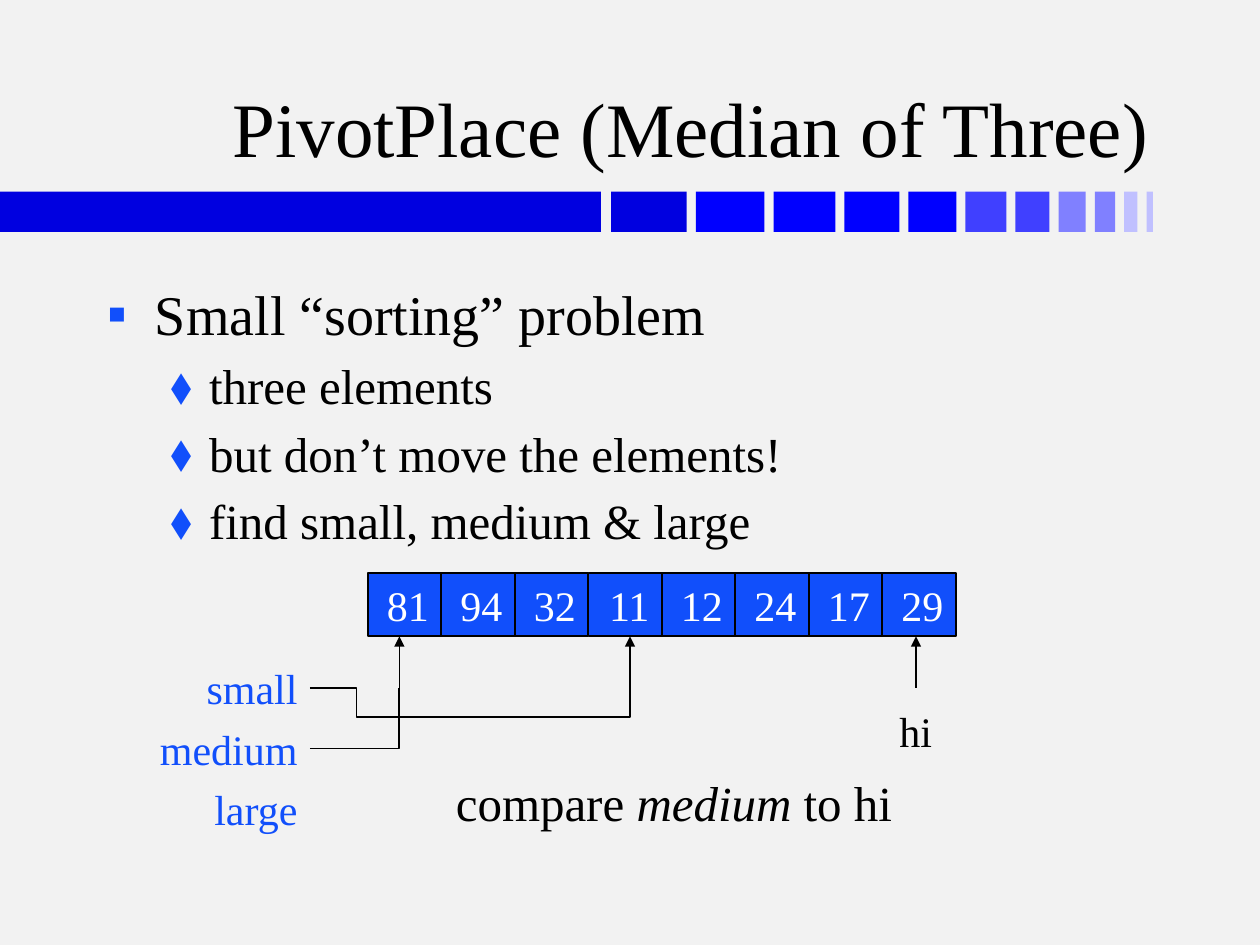
import pptx
import pptx.util
import pptx.dml.color
import pptx.enum.shapes
import pptx.enum.text
import pptx.oxml
import pptx.oxml.ns
from pptx.util import Inches

ALIGN = pptx.enum.text.PP_ALIGN
ANCHOR = pptx.enum.text.MSO_ANCHOR
RECT = pptx.enum.shapes.MSO_SHAPE.RECTANGLE
STRAIGHT = pptx.enum.shapes.MSO_CONNECTOR.STRAIGHT
BLUE, BLACK, WHITE = "114FFB", "000000", "FFFFFF"


def color(code):
    return pptx.dml.color.RGBColor.from_string(code)


def add_xml(node, tag, **attrs):
    child = pptx.oxml.parse_xml(f"<a:{tag} {pptx.oxml.ns.nsdecls('a')}/>")
    for key, value in attrs.items():
        child.set(key, str(value))
    node.append(child)
    return child


def write(par, text, size=24, ink=BLACK, font="Times New Roman", italic=False, align=None):
    run = par.add_run()
    run.text = text
    run.font.size = pptx.util.Pt(size)
    run.font.name = font
    run.font.italic = italic
    run.font.color.rgb = color(ink)
    if align is not None:
        par.alignment = align


class Deck:
    """Holds the line style and the current slide."""

    def __init__(self, slide, ink=BLACK, width=1):
        self.slide = slide
        self.ink = ink
        self.width = pptx.util.Pt(width)

    def place(self, shape, left, top, width, height):
        shape.left, shape.top = Inches(left), Inches(top)
        shape.width, shape.height = Inches(width), Inches(height)
        shape.text_frame.auto_size = pptx.enum.text.MSO_AUTO_SIZE.NONE

    def stroke(self, shape):
        shape.line.color.rgb = color(self.ink)
        shape.line.width = self.width

    def title(self, text, *box):
        shape = self.slide.shapes.title
        self.place(shape, *box)
        shape.text_frame.vertical_anchor = ANCHOR.BOTTOM
        write(shape.text_frame.paragraphs[0], text, size=44, align=ALIGN.RIGHT)

    def body(self, items, *box):
        shape = self.slide.placeholders[1]
        self.place(shape, *box)
        frame = shape.text_frame
        styles = [(32, 0.38, 0.38, 4, "▪"), (28, 0.81, 0.31, 5, "⬧")]
        for i, (level, text) in enumerate(items):
            par = frame.add_paragraph() if i else frame.paragraphs[0]
            size, margin, hang, gap, mark = styles[level]
            par.level = level
            par.space_before = pptx.util.Pt(gap)
            props = par._p.get_or_add_pPr()
            props.set("marL", str(Inches(margin)))
            props.set("indent", str(-Inches(hang)))
            add_xml(add_xml(props, "buClr"), "srgbClr", val=BLUE)
            add_xml(props, "buChar", char=mark)
            write(par, text, size=size)

    def rect(self, left, top, width, height, fill, text=None):
        shape = self.slide.shapes.add_shape(
            RECT, Inches(left), Inches(top), Inches(width), Inches(height))
        shape.shadow.inherit = False
        shape.fill.solid()
        shape.fill.fore_color.rgb = color(fill)
        if text is None:
            shape.line.fill.background()
            return
        self.stroke(shape)
        shape.text_frame.word_wrap = False
        shape.text_frame.vertical_anchor = ANCHOR.MIDDLE
        write(shape.text_frame.paragraphs[0], text, ink=WHITE, align=ALIGN.RIGHT)

    def label(self, parts, left, top, width, height, **style):
        box = self.slide.shapes.add_textbox(
            Inches(left), Inches(top), Inches(width), Inches(height))
        box.text_frame.word_wrap = False
        for text, italic in parts:
            write(box.text_frame.paragraphs[0], text, italic=italic, **style)

    def arrow(self, x, start, end):
        line = self.slide.shapes.add_connector(
            STRAIGHT, Inches(x), Inches(start), Inches(x), Inches(end))
        self.stroke(line)
        add_xml(line.line._get_or_add_ln(), "tailEnd", type="triangle")
        add_xml(line._element.spPr, "effectLst")

    def bend(self, *points):
        first, *rest = [(Inches(x), Inches(y)) for x, y in points]
        form = self.slide.shapes.build_freeform(*first)
        form.add_line_segments(rest, close=False)
        shape = form.convert_to_shape()
        shape.shadow.inherit = False
        shape.fill.background()
        self.stroke(shape)


def main():
    prs = pptx.Presentation()
    prs.slide_width, prs.slide_height = Inches(10), Inches(7.5)
    slide = prs.slides.add_slide(prs.slide_layouts[1])
    slide.background.fill.solid()
    slide.background.fill.fore_color.rgb = color("F2F2F2")
    deck = Deck(slide)

    # Title and list
    deck.title("PivotPlace (Median of Three)", 0.74, 0.19, 8.48, 1.23)
    deck.body([(0, "Small “sorting” problem"),
               (1, "three elements"),
               (1, "but don’t move the elements!"),
               (1, "find small, medium & large")], 0.75, 2.17, 8.5, 4.5)

    # Fading bar: blocks shrink evenly from 0.6 to 0.05
    deck.rect(0, 1.52, 4.77, 0.32, "0000E0")
    fades = ["0000E0"] + ["0000FF"] * 4 + ["4040FF"] * 2 + ["8080FF"] * 2 + ["C0C0FF"] * 2
    left, gap = 4.85, 0.29 / 4
    for i, fade in enumerate(fades):
        width = 0.6 - 0.55 * i / 10
        deck.rect(left, 1.52, width, 0.32, fade)
        left += width + gap

    # Array cells
    cell = 7 / 12
    for i, value in enumerate([81, 94, 32, 11, 12, 24, 17, 29]):
        deck.rect(2.92 + i * cell, 4.55, cell, 0.5, BLUE, str(value))

    # Labels, right edges aligned
    for i, (name, width) in enumerate([("small", 0.92), ("medium", 1.29), ("large", 0.87)]):
        deck.label([(name, False)], 2.46 - width, 5.21 + 0.48 * i, width, 0.5,
                   ink=BLUE, align=ALIGN.RIGHT)
    deck.label([("hi", False)], 7.04, 5.55, 0.46, 0.5)
    deck.label([("compare ", False), ("medium", True), (" to hi", False)],
               3.52, 6.08, 3.66, 0.57, size=28)

    # Pointers into the array
    for x in (3.17, 5, 7.27):
        deck.arrow(x, 5.46, 5.05)
    deck.bend((2.46, 5.46), (2.83, 5.46), (2.83, 5.69), (5, 5.69), (5, 5.46))
    deck.bend((2.46, 5.94), (3.17, 5.94), (3.17, 5.46))

    prs.save("out.pptx")


if __name__ == "__main__":
    main()
